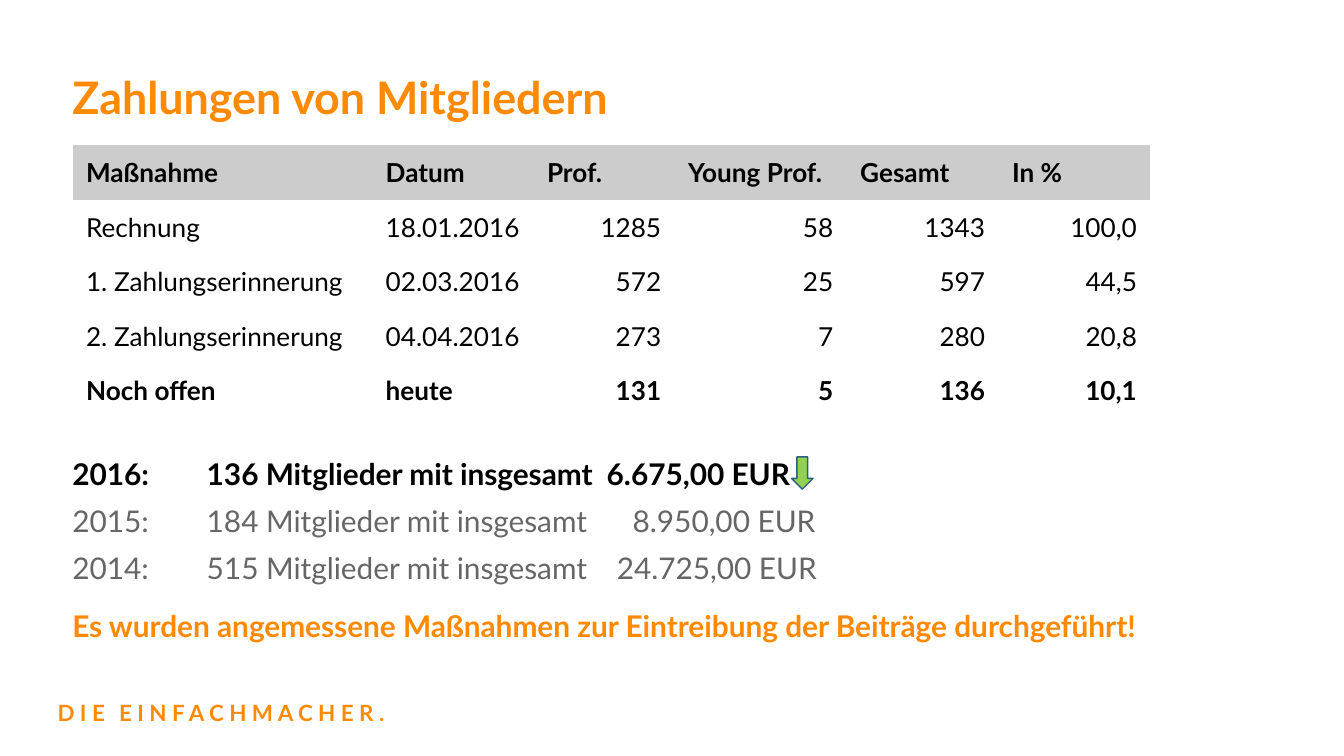
from lxml import etree
from pptx import Presentation
from pptx.dml.color import RGBColor
from pptx.enum import shapes, text
from pptx.oxml import ns
from pptx.util import Inches, Pt

ORANGE = RGBColor(0xFF, 0x89, 0x00)
BLACK = RGBColor(0, 0, 0)
GRAY = RGBColor(0x66, 0x66, 0x66)
SILVER = RGBColor(0xCC, 0xCC, 0xCC)
GREEN = RGBColor(0x92, 0xD0, 0x50)
BLUE = RGBColor(0x2A, 0x5E, 0x87)


def style(para, size, color, bold):
    for run in para.runs:
        font = run.font
        font.name, font.size, font.bold = "Lato", Pt(size), bold
        font.color.rgb = color


def add_box(left, top, width, height):
    frame = slide.shapes.add_textbox(
        Inches(left), Inches(top), Inches(width), Inches(height)).text_frame
    frame.word_wrap = True
    frame.margin_left = frame.margin_right = Inches(0.1)
    frame.margin_top = frame.margin_bottom = Inches(0.1)
    return frame


# Widescreen deck, 16:9
deck = Presentation()
deck.slide_width = Inches(10)
deck.slide_height = Inches(10) * 9 // 16
slide = deck.slides.add_slide(deck.slide_layouts[6])

# Footer claim, with a widened gap between its two words
claim = add_box(0.33, 5.1, 3.1, 0.41).paragraphs[0]
for words in ("D I E", " ", "E I N F A C H M A C H E R ."):
    claim.add_run().text = words
style(claim, 12, ORANGE, True)
claim.runs[1].font._element.set("spc", "460")

# Title
title = add_box(0.44, 0.36, 9.2, 0.64).paragraphs[0]
title.text = "Zahlungen von Mitgliedern"
title.line_spacing = 1.15
style(title, 24, ORANGE, True)

# Open amounts per year: text, right tab for the amount, space before, look
lines = [
    ("2016:\t136 Mitglieder mit insgesamt\t6.675,00 EUR", 5.34, 0, BLACK, True),
    ("2015:\t184 Mitglieder mit insgesamt\t8.950,00 EUR", 5.53, 6, GRAY, False),
    ("2014:\t515 Mitglieder mit insgesamt\t24.725,00 EUR", 5.54, 6, GRAY, False),
    ("Es wurden angemessene Maßnahmen zur Eintreibung der Beiträge "
     "durchgeführt!", None, 12, ORANGE, True),
]
body = add_box(0.44, 3.29, 9.2, 1.57)
for i, (words, stop, gap, color, bold) in enumerate(lines):
    para = body.paragraphs[0] if i == 0 else body.add_paragraph()
    para.text = words
    if stop:
        tabs = etree.SubElement(para._p.get_or_add_pPr(), ns.qn("a:tabLst"))
        for pos, side in ((1, "l"), (stop, "r")):
            etree.SubElement(tabs, ns.qn("a:tab"), pos=str(Inches(pos)), algn=side)
    para.space_before = Pt(gap)
    style(para, 16, color, bold)

# Table of payment steps
rows = [
    ("Maßnahme", "Datum", "Prof.", "Young Prof.", "Gesamt", "In %"),
    ("Rechnung", "18.01.2016", "1285", "58", "1343", "100,0"),
    ("1. Zahlungserinnerung", "02.03.2016", "572", "25", "597", "44,5"),
    ("2. Zahlungserinnerung", "04.04.2016", "273", "7", "280", "20,8"),
    ("Noch offen", "heute", "131", "5", "136", "10,1"),
]
widths = [2.23, 1.2, 1.05, 1.28, 1.13, 1.13]
high = Inches(2.03)
table = slide.shapes.add_table(
    len(rows), len(widths), Inches(0.54), Inches(1.08),
    Inches(sum(widths)), high).table
table.first_row = table.horz_banding = False
# Plain table style without grid lines
table._tbl.tblPr.find(ns.qn("a:tableStyleId")).text = (
    "{2D5ABB26-0587-4C30-8999-92F81FD0307C}")
for col, width in zip(table.columns, widths):
    col.width = Inches(width)
for r, row in enumerate(rows):
    table.rows[r].height = high // len(rows)
    for c, words in enumerate(row):
        cell = table.cell(r, c)
        cell.vertical_anchor = text.MSO_ANCHOR.MIDDLE
        if r == 0:
            cell.fill.solid()
            cell.fill.fore_color.rgb = SILVER
        else:
            cell.fill.background()
        para = cell.text_frame.paragraphs[0]
        para.text = words
        if r > 0 and c > 1:
            para.alignment = text.PP_ALIGN.RIGHT
        style(para, 14, BLACK, r in (0, len(rows) - 1))

# Green arrow: the open amount falls
arrow = slide.shapes.add_shape(
    shapes.MSO_SHAPE.DOWN_ARROW,
    Inches(5.89), Inches(3.4), Inches(0.16), Inches(0.24))
arrow.shadow.inherit = False
arrow.fill.solid()
arrow.fill.fore_color.rgb = GREEN
arrow.line.color.rgb = BLUE
arrow.line.width = Pt(0.75)

deck.save("out.pptx")
